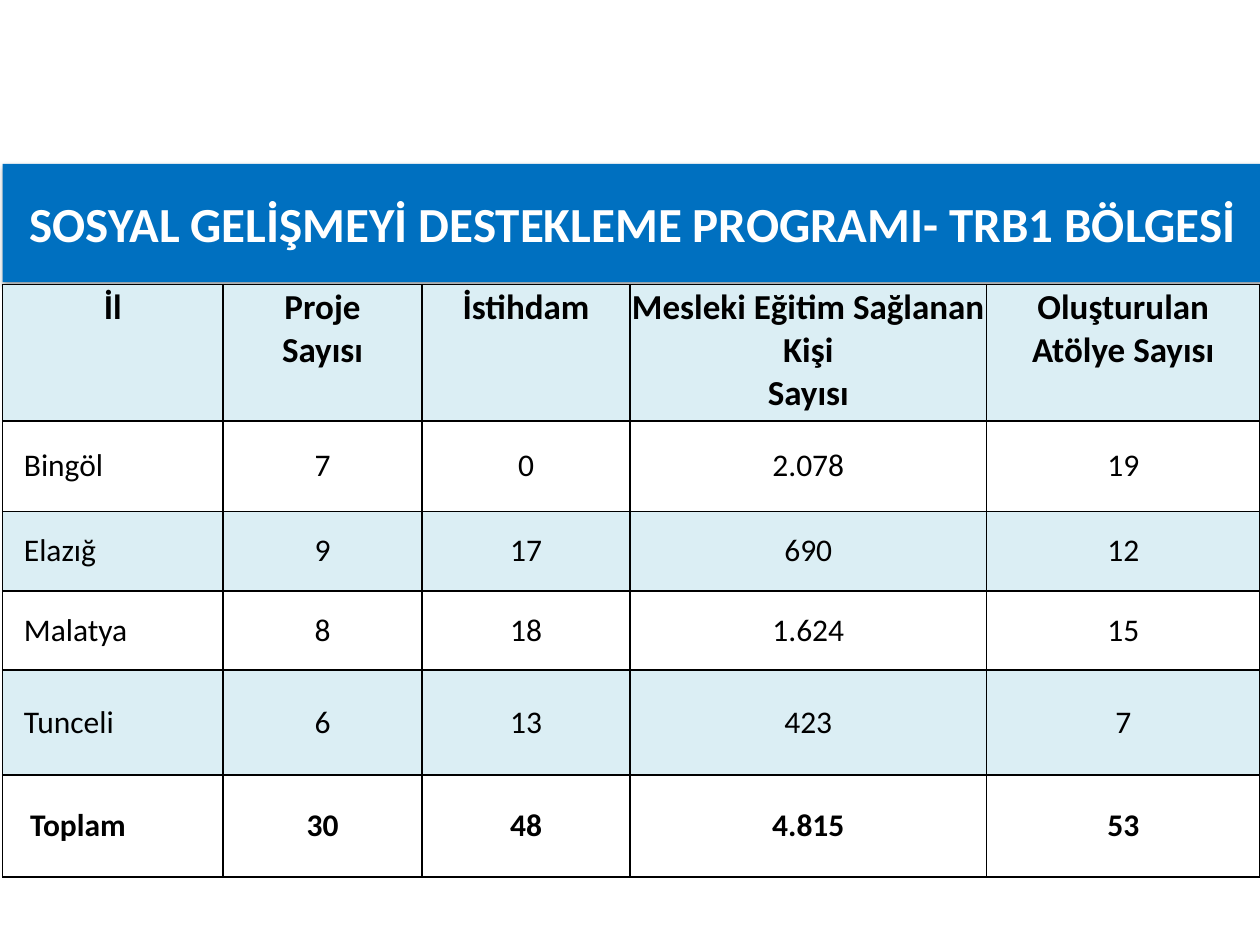
import pptx
import pptx.util
import pptx.dml.color
import pptx.enum.text
import pptx.oxml
import pptx.oxml.ns
from pptx.util import Inches

RGBColor = pptx.dml.color.RGBColor
PP_ALIGN = pptx.enum.text.PP_ALIGN
MSO_ANCHOR = pptx.enum.text.MSO_ANCHOR

# Content
HEADING = "SOSYAL GELİŞMEYİ DESTEKLEME PROGRAMI- TRB1 BÖLGESİ"
PROVINCES = [
    ("İl", "Proje\nSayısı", "İstihdam",
     "Mesleki Eğitim Sağlanan Kişi\nSayısı", "Oluşturulan\nAtölye Sayısı"),
    ("Bingöl", "7", "0", "2.078", "19"),
    ("Elazığ", "9", "17", "690", "12"),
    ("Malatya", "8", "18", "1.624", "15"),
    ("Tunceli", "6", "13", "423", "7"),
    ("Toplam", "30", "48", "4.815", "53"),
]
COLUMN_WIDTHS = [1.75, 1.58, 1.65, 2.83, 2.17]
ROW_HEIGHTS = [1.08, 0.72, 0.63, 0.63, 0.83, 0.81]
LEFT = 0.02

FONT = "Calibri"
BLUE = RGBColor(0x00, 0x70, 0xC0)
PALE_BLUE = RGBColor(0xDB, 0xEE, 0xF4)
WHITE = RGBColor(0xFF, 0xFF, 0xFF)
BLACK = RGBColor(0x00, 0x00, 0x00)

NS = pptx.oxml.ns.nsdecls("a")
SHADOW = (
    f'<a:effectLst {NS}><a:outerShdw blurRad="39370" dist="22860" dir="5400000" '
    'rotWithShape="0"><a:srgbClr val="000000"><a:alpha val="35000"/></a:srgbClr>'
    '</a:outerShdw></a:effectLst>'
)


def style(paragraph, size, color, bold, align=PP_ALIGN.CENTER):
    paragraph.alignment = align
    font = paragraph.font
    font.name, font.size, font.bold = FONT, pptx.util.Pt(size), bold
    font.color.rgb = color


def add_borders(cell):
    properties = cell._tc.get_or_add_tcPr()
    for side in "LRTB":
        properties.append(pptx.oxml.parse_xml(
            f'<a:ln{side} {NS} w="12700"><a:solidFill><a:srgbClr val="{BLACK}"/>'
            f'</a:solidFill></a:ln{side}>'))


prs = pptx.Presentation()
prs.slide_width, prs.slide_height = Inches(10), Inches(7.5)
slide = prs.slides.add_slide(prs.slide_layouts[5])

# Title banner
banner = slide.shapes.title
banner.left, banner.top = Inches(LEFT), Inches(1.3)
banner.width, banner.height = Inches(10), Inches(0.94)
banner.fill.solid()
banner.fill.fore_color.rgb = BLUE
banner.line.fill.background()
banner._element.spPr.append(pptx.oxml.parse_xml(SHADOW))
banner.text_frame.text = HEADING
banner.text_frame.auto_size = pptx.enum.text.MSO_AUTO_SIZE.NONE
banner.text_frame.vertical_anchor = MSO_ANCHOR.MIDDLE
style(banner.text_frame.paragraphs[0], 28, WHITE, True)

# Province table
results = slide.shapes.add_table(
    len(PROVINCES), len(COLUMN_WIDTHS), Inches(LEFT), Inches(2.26),
    Inches(sum(COLUMN_WIDTHS)), Inches(sum(ROW_HEIGHTS))).table
for column, width in zip(results.columns, COLUMN_WIDTHS):
    column.width = Inches(width)
for row, height in zip(results.rows, ROW_HEIGHTS):
    row.height = Inches(height)

for r, values in enumerate(PROVINCES):
    is_header, is_total = r == 0, r == len(PROVINCES) - 1
    for c, value in enumerate(values):
        cell = results.cell(r, c)
        is_name = c == 0 and not is_header
        inset = 0.01 if is_header else 0
        cell.margin_left = cell.margin_right = cell.margin_top = Inches(inset)
        cell.margin_bottom = 0
        if is_name:
            cell.margin_left = Inches(0.22 if is_total else 0.17)
        cell.vertical_anchor = MSO_ANCHOR.TOP if is_header else MSO_ANCHOR.MIDDLE
        add_borders(cell)
        cell.fill.solid()
        cell.fill.fore_color.rgb = WHITE if r % 2 else PALE_BLUE
        cell.text_frame.text = value
        for paragraph in cell.text_frame.paragraphs:
            style(paragraph, 20 if is_header else 18, BLACK, is_header or is_total,
                  PP_ALIGN.LEFT if is_name else PP_ALIGN.CENTER)

prs.save("out.pptx")
